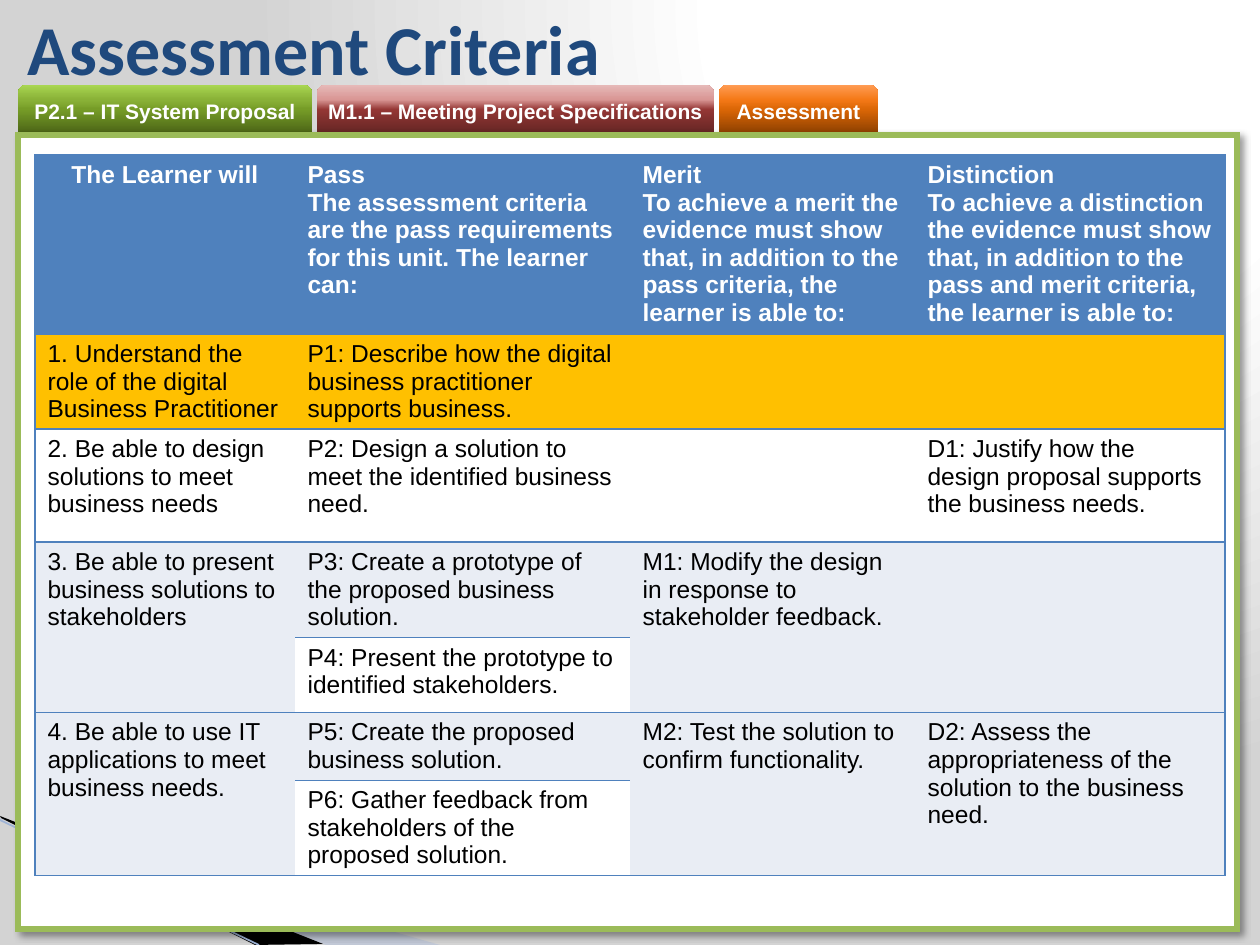
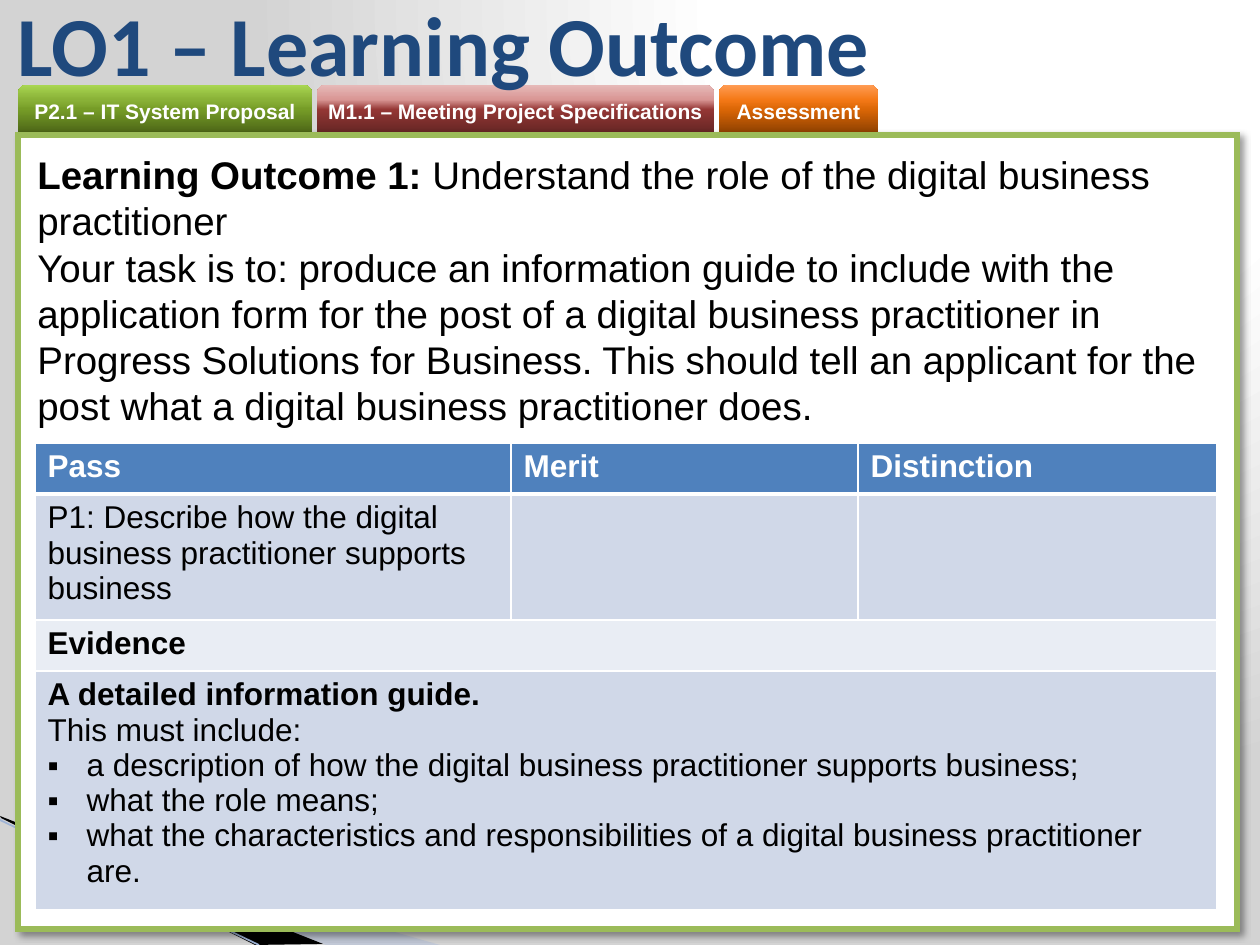
from dataclasses import dataclass

from lxml import etree
from pptx import Presentation
from pptx import util as u
from pptx.dml.color import RGBColor
from pptx.enum import shapes, text
from pptx.oxml.ns import qn


@dataclass(frozen=True)
class Theme:
    heading_font: str = "Calibri"
    body_font: str = "Arial"
    title: str = "1F497D"
    black: str = "000000"
    white: str = "FFFFFF"
    frame: str = "9BBB59"
    blue: str = "4F81BD"
    highlight: str = "FFC000"
    pale_band: str = "E9EDF4"
    dark_band: str = "D0D8E8"
    wedge: str = "A7B9DB"
    wedge_line: str = "9EB3D6"
    background: tuple = ((0, "FFFFFF"), (40, "FFFFFF"), (100, "D3D3D3"))
    green_tab: tuple = ((0, "4A6316"), (50, "769C27"), (70, "89B137"), (100, "A9D651"))
    red_tab: tuple = ((0, "632523"), (50, "953735"), (70, "D99694"), (100, "E6B9B8"))
    orange_tab: tuple = ((0, "8B3F00"), (50, "DA6606"), (70, "F47917"), (100, "FF9C54"))
    tab_size: int = 12
    criteria_size: int = 14
    evidence_size: int = 18
    task_size: int = 22


THEME = Theme()
PX = 914400 / 126
NO_GRID_STYLE = "{2D5ABB26-0587-4C30-8999-92F81FD0307C}"


def set_gradient(fill, properties, stops):
    """Fill with the stops and return the gradient element, still without a direction."""
    fill.gradient()
    gradient = properties.find(qn("a:gradFill"))
    gradient.clear()
    stop_list = etree.SubElement(gradient, qn("a:gsLst"))
    for position, color in stops:
        stop = etree.SubElement(stop_list, qn("a:gs"), pos=str(position * 1000))
        etree.SubElement(stop, qn("a:srgbClr"), val=color)
    return gradient


def write_cell(cell, content, size, color, fill, borders, bold=False):
    """Borders map the sides L, R, T, B to (colour, points)."""
    properties = cell._tc.get_or_add_tcPr()
    for side in "LRTB":
        if side in borders:
            border_color, points = borders[side]
            line = etree.SubElement(properties, qn(f"a:ln{side}"), w=str(u.Pt(points)))
            solid = etree.SubElement(line, qn("a:solidFill"))
            etree.SubElement(solid, qn("a:srgbClr"), val=border_color)
    cell.fill.solid()
    cell.fill.fore_color.rgb = RGBColor.from_string(fill)
    cell.text_frame.text = content
    for paragraph in cell.text_frame.paragraphs:
        paragraph.font.size = u.Pt(size)
        for run in paragraph.runs:
            run.font.name = THEME.body_font
            run.font.size = u.Pt(size)
            run.font.bold = bold
            run.font.color.rgb = RGBColor.from_string(color)


presentation = Presentation()
presentation.slide_width = u.Inches(10)
presentation.slide_height = u.Inches(7.5)

# Background: light spreads from the top right
master = presentation.slide_master
fill = master.background.fill
gradient = set_gradient(fill, master._element.find(".//" + qn("p:bgPr")), THEME.background)
path = etree.SubElement(gradient, qn("a:path"), {"path": "circle"})
etree.SubElement(path, qn("a:fillToRect"), l="65000", t="0", r="0", b="98000")

# Parts that both slides share
TITLES = [
    ("Assessment Criteria", 40, 15, 96),
    ("LO1 – Learning Outcome", 48, 5, 86),
]
WEDGES = [
    (THEME.wedge, 40, [(0, 819), (440, 945), (326, 945), (0, 818)]),
    (THEME.black, 100, [(0, 816), (323, 944), (255, 945), (1, 818)]),
]
TABS = [
    ("P2.1 – IT System Proposal", 294, THEME.green_tab),
    ("M1.1 – Meeting Project Specifications", 397, THEME.red_tab),
    ("Assessment", 159, THEME.orange_tab),
]
TAB_GAP = 5

slides = []
for title_text, title_size, title_left, title_height in TITLES:
    slide = presentation.slides.add_slide(presentation.slide_layouts[5])
    slides.append(slide)

    for color, opacity, points in WEDGES:
        builder = slide.shapes.build_freeform(*points[0], scale=PX)
        builder.add_line_segments(points[1:], close=True)
        wedge = builder.convert_to_shape()
        wedge.shadow.inherit = False
        wedge.fill.solid()
        wedge.fill.fore_color.rgb = RGBColor.from_string(color)
        wedge.line.fill.background()
        if opacity < 100:
            color_element = wedge._element.spPr.find(f"{qn('a:solidFill')}/{qn('a:srgbClr')}")
            etree.SubElement(color_element, qn("a:alpha"), val=str(opacity * 1000))

    edge = slide.shapes.add_connector(
        shapes.MSO_CONNECTOR.STRAIGHT, 0, int(820 * PX), int(259 * PX), int(945 * PX))
    edge.line.color.rgb = RGBColor.from_string(THEME.wedge_line)
    edge.line.width = u.Pt(0.95)
    etree.SubElement(edge._element.spPr, qn("a:effectLst"))

    tab_left = 18
    for label, width, stops in TABS:
        tab = slide.shapes.add_shape(
            shapes.MSO_SHAPE.ROUND_2_SAME_RECTANGLE,
            int(tab_left * PX), int(85 * PX), int(width * PX), int(49 * PX))
        tab_left += width + TAB_GAP
        tab.shadow.inherit = False
        tab.line.fill.background()
        gradient = set_gradient(tab.fill, tab._element.spPr, stops)
        etree.SubElement(gradient, qn("a:lin"), ang=str(270 * 60000), scaled="0")
        frame = tab.text_frame
        frame.margin_left = frame.margin_right = frame.margin_top = frame.margin_bottom = 0
        frame.vertical_anchor = text.MSO_ANCHOR.MIDDLE
        frame.text = label
        paragraph = frame.paragraphs[0]
        paragraph.alignment = text.PP_ALIGN.CENTER
        font = paragraph.runs[0].font
        font.name, font.size, font.bold = THEME.body_font, u.Pt(THEME.tab_size), True
        font.color.rgb = RGBColor.from_string(THEME.white)

    panel = slide.shapes.add_shape(
        shapes.MSO_SHAPE.RECTANGLE,
        int(18 * PX), int(135 * PX), int(1219 * PX), int(794 * PX))
    panel.fill.solid()
    panel.fill.fore_color.rgb = RGBColor.from_string(THEME.white)
    panel.line.color.rgb = RGBColor.from_string(THEME.frame)
    panel.line.width = u.Pt(3)
    etree.SubElement(panel._element.spPr.find(qn("a:ln")), qn("a:miter"), lim="800000")
    panel.shadow.inherit = False
    shadow = etree.SubElement(
        panel._element.spPr.find(qn("a:effectLst")), qn("a:outerShdw"),
        blurRad=str(u.Pt(4)), dist=str(u.Pt(3)), dir=str(45 * 60000), algn="tl", rotWithShape="0")
    shadow_color = etree.SubElement(shadow, qn("a:srgbClr"), val=THEME.black)
    etree.SubElement(shadow_color, qn("a:alpha"), val="40000")

    title = slide.shapes.title
    slide.shapes._spTree.append(title._element)
    title.left, title.top = int(title_left * PX), 0
    title.width, title.height = int(1062 * PX), int(title_height * PX)
    title.text_frame.text = title_text
    title.text_frame.auto_size = text.MSO_AUTO_SIZE.NONE
    title.text_frame.vertical_anchor = text.MSO_ANCHOR.MIDDLE
    paragraph = title.text_frame.paragraphs[0]
    paragraph.alignment = text.PP_ALIGN.LEFT
    font = paragraph.runs[0].font
    font.name, font.size, font.bold = THEME.heading_font, u.Pt(title_size), True
    font.color.rgb = RGBColor.from_string(THEME.title)

criteria_slide, outcome_slide = slides

# Slide 1: criteria table
CRITERIA = [
    ["The Learner will",
     "Pass\nThe assessment criteria are the pass requirements for this unit. The learner can:",
     "Merit\nTo achieve a merit the evidence must show that, in addition to the pass criteria, "
     "the learner is able to:",
     "Distinction\nTo achieve a distinction the evidence must show that, in addition to the "
     "pass and merit criteria, the learner is able to:"],
    ["1. Understand the role of the digital\nBusiness Practitioner",
     "P1: Describe how the digital business practitioner supports business.", "", ""],
    ["2. Be able to design solutions to meet business needs",
     "P2: Design a solution to meet the identified business need.", "",
     "D1: Justify how the design proposal supports the business needs."],
    ["3. Be able to present\nbusiness solutions to\nstakeholders",
     "P3: Create a prototype of the proposed business solution.",
     "M1: Modify the design in response to stakeholder feedback.", ""],
    ["", "P4: Present the prototype to identified stakeholders.", "", ""],
    ["4. Be able to use IT\napplications to meet\nbusiness needs.",
     "P5: Create the proposed business solution.",
     "M2: Test the solution to confirm functionality.",
     "D2: Assess the appropriateness of the\nsolution to the business need."],
    ["", "P6: Gather feedback from stakeholders of the proposed solution.", "", ""],
]
CRITERIA_FILLS = [THEME.blue, THEME.highlight, THEME.white, THEME.pale_band, THEME.white,
                  THEME.pale_band, THEME.white]
CRITERIA_COLUMNS = [260, 335, 285, 310]
CRITERIA_ROWS = [179, 95, 113, 95, 75, 68, 95]

# Slide 2: outcome table
OUTCOME = [
    ["Pass", "Merit", "Distinction"],
    ["P1: Describe how the digital business practitioner supports business", "", ""],
    ["Evidence", "", ""],
    ["A detailed information guide.\nThis must include:\n"
     "a description of how the digital business practitioner supports business;\n"
     "what the role means;\n"
     "what the characteristics and responsibilities of a digital business practitioner are.",
     "", ""],
]
OUTCOME_FILLS = [THEME.blue, THEME.dark_band, THEME.pale_band, THEME.dark_band]
OUTCOME_COLUMNS = [476, 347, 359]
OUTCOME_ROWS = [51, 126, 51, 239]

tables = []
for slide, top, columns, rows in [
    (criteria_slide, 155, CRITERIA_COLUMNS, CRITERIA_ROWS),
    (outcome_slide, 443, OUTCOME_COLUMNS, OUTCOME_ROWS),
]:
    table = slide.shapes.add_table(
        len(rows), len(columns), int(35 * PX), int(top * PX),
        int(sum(columns) * PX), int(sum(rows) * PX)).table
    table._tbl.tblPr.find(qn("a:tableStyleId")).text = NO_GRID_STYLE
    table.horz_banding = False
    for column, width in zip(table.columns, columns):
        column.width = int(width * PX)
    for row, height in zip(table.rows, rows):
        row.height = int(height * PX)
    tables.append(table)
criteria_table, outcome_table = tables

for first_row in (3, 5):
    for column in (0, 2, 3):
        criteria_table.cell(first_row, column).merge(criteria_table.cell(first_row + 1, column))
for row in (2, 3):
    outcome_table.cell(row, 0).merge(outcome_table.cell(row, 2))

for row, contents in enumerate(CRITERIA):
    for column, content in enumerate(contents):
        cell = criteria_table.cell(row, column)
        if cell.is_spanned:
            continue
        sides = "TB" + {0: "L", 3: "R"}.get(column, "")
        write_cell(cell, content, THEME.criteria_size,
                   THEME.white if row == 0 else THEME.black, CRITERIA_FILLS[row],
                   {side: (THEME.blue, 1) for side in sides}, bold=row == 0)
criteria_table.cell(0, 0).text_frame.paragraphs[0].alignment = text.PP_ALIGN.CENTER

for row, contents in enumerate(OUTCOME):
    for column, content in enumerate(contents):
        cell = outcome_table.cell(row, column)
        if cell.is_spanned:
            continue
        borders = {side: (THEME.white, 1) for side in "LRTB"}
        if row < 2:
            borders["B" if row == 0 else "T"] = (THEME.white, 3)
        write_cell(cell, content, THEME.evidence_size,
                   THEME.white if row == 0 else THEME.black, OUTCOME_FILLS[row],
                   borders, bold=row in (0, 2))

guide = outcome_table.cell(3, 0).text_frame.paragraphs
guide[0].runs[0].font.bold = True
for paragraph in guide[2:]:
    properties = paragraph._p.get_or_add_pPr()
    properties.set("marL", str(int(39 * PX)))
    properties.set("indent", str(-int(39 * PX)))
    properties.insert(0, etree.Element(qn("a:buFont"), typeface=THEME.body_font))
    properties.insert(1, etree.Element(qn("a:buChar"), char="▪"))

# Slide 2: task text
task = outcome_slide.shapes.add_textbox(
    int(25 * PX), int(145 * PX), int(1192 * PX), int(292 * PX)).text_frame
task.word_wrap = True
task.text = (
    "Learning Outcome 1: \n"
    "Your task is to: produce an information guide to include with the application form for the "
    "post of a digital business practitioner in Progress Solutions for Business. This should tell "
    "an applicant for the post what a digital business practitioner does.")
outcome_run = task.paragraphs[0].add_run()
outcome_run.text = "Understand the role of the digital business practitioner"
for paragraph in task.paragraphs:
    for run in paragraph.runs:
        run.font.name = THEME.body_font
        run.font.size = u.Pt(THEME.task_size)
        run.font.color.rgb = RGBColor.from_string(THEME.black)
task.paragraphs[0].runs[0].font.bold = True

presentation.save("out.pptx")
